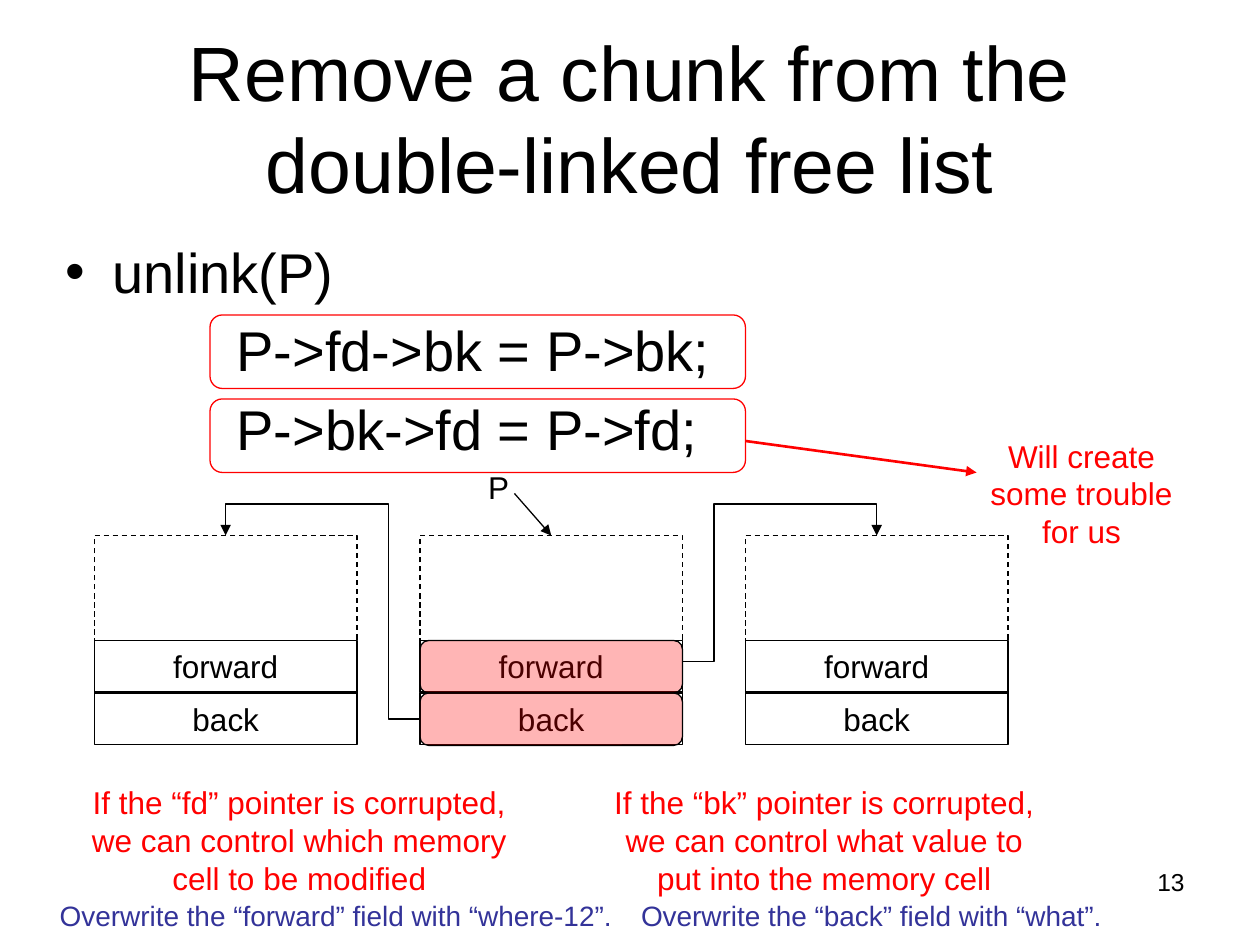
from dataclasses import dataclass

from pptx import Presentation
from pptx.dml.color import RGBColor as RGB
from pptx.enum import dml, shapes as kinds, text as txt
from pptx.oxml import ns
from pptx.oxml.xmlchemy import OxmlElement as new
from pptx.util import Pt


@dataclass(frozen=True)
class Theme:
    font: str = "Arial"
    ink: RGB = RGB(0, 0, 0)
    red: RGB = RGB(0xFF, 0, 0)
    blue: RGB = RGB(0x33, 0x33, 0x99)
    title: int = 44
    body: int = 32
    label: int = 18
    hint: int = 16
    page: int = 14
    thin: float = 0.75
    thick: float = 1.5


T = Theme()
MID = txt.PP_ALIGN.CENTER
BOX = kinds.MSO_SHAPE.RECTANGLE
ROUND = kinds.MSO_SHAPE.ROUNDED_RECTANGLE
LINE = kinds.MSO_CONNECTOR.STRAIGHT
BENT = kinds.MSO_CONNECTOR.ELBOW

# Chunk grid: three columns, each a dashed block with two fields
LEFT, STEP, WIDE = 54, 186, 150
TOP, TALL = 306, 90
FORE, BACK, FIELD = 366, 396, 29.5


def pts(*vals):
    return [Pt(v) for v in vals]


def place(item, at):
    item.left, item.top, item.width, item.height = pts(*at)


def write(para, words, size, ink=T.ink, align=None):
    para.alignment = align
    run = para.add_run()
    run.text = words
    run.font.name = T.font
    run.font.size = Pt(size)
    run.font.color.rgb = ink


def label(slide, words, at, size=T.label, ink=T.ink, align=MID):
    frame = slide.shapes.add_textbox(*pts(*at)).text_frame
    frame.word_wrap = True
    write(frame.paragraphs[0], words, size, ink, align)


def block(slide, kind, at, ink=T.ink, words="", dash=False, tint=False):
    item = slide.shapes.add_shape(kind, *pts(*at))
    item.shadow.inherit = False
    item.line.color.rgb = ink
    item.line.width = Pt(T.thin)
    if dash:
        item.line.dash_style = dml.MSO_LINE.DASH
    if tint:
        item.fill.solid()
        item.fill.fore_color.rgb = T.red
        alpha = new("a:alpha")
        alpha.set("val", "29000")
        item.element.spPr.find(".//" + ns.qn("a:srgbClr")).append(alpha)
    else:
        item.fill.background()
    if words:
        frame = item.text_frame
        frame.vertical_anchor = txt.MSO_ANCHOR.MIDDLE
        write(frame.paragraphs[0], words, T.label, align=MID)
    return item


def arrow(slide, start, end, kind=LINE, ink=T.ink, width=T.thin, bends=()):
    link = slide.shapes.add_connector(kind, *pts(*start, *end))
    link.line.color.rgb = ink
    link.line.width = Pt(width)
    props = link.element.spPr
    tip = new("a:tailEnd")
    tip.set("type", "triangle")
    props.find(ns.qn("a:ln")).append(tip)
    props.append(new("a:effectLst"))
    if bends:
        geom = props.find(ns.qn("a:prstGeom"))
        geom.set("prst", "bentConnector4")
        for num, share in enumerate(bends, 1):
            guide = new("a:gd")
            guide.set("name", f"adj{num}")
            guide.set("fmla", f"val {round(share * 100000)}")
            geom.find(ns.qn("a:avLst")).append(guide)
    return link


def loop(slide, start, end, side, rise):
    # Step out sideways, climb above the target, then drop onto it
    wide, tall = abs(end[0] - start[0]), start[1] - end[1]
    arrow(slide, start, end, BENT, bends=(side / wide, 1 + rise / tall))


def heads(slide):
    title = slide.shapes.title
    place(title, (36, 21.6, 648, 90))
    frame = title.text_frame
    frame.auto_size = txt.MSO_AUTO_SIZE.NONE
    frame.vertical_anchor = txt.MSO_ANCHOR.MIDDLE
    write(frame.paragraphs[0], "Remove a chunk from the double-linked free list",
          T.title, align=MID)

    body = slide.placeholders[1]
    place(body, (30, 132, 648, 356))
    frame = body.text_frame
    frame.auto_size = txt.MSO_AUTO_SIZE.NONE
    write(frame.paragraphs[0], "unlink(P)", T.body)
    for code in ("P->fd->bk = P->bk;", "P->bk->fd = P->fd;"):
        para = frame.add_paragraph()
        write(para, code, T.body)
        props = para._p.get_or_add_pPr()
        props.set("marL", str(Pt(98)))
        props.set("indent", "0")
        props.append(new("a:buNone"))


def chunk(slide, col):
    left = LEFT + col * STEP
    top = block(slide, BOX, (left, TOP, WIDE, TALL), dash=True)
    for words, y in (("back", BACK), ("forward", FORE)):
        block(slide, BOX, (left, y, WIDE, FIELD), words=words)
    return top


def main():
    deck = Presentation()
    deck.slide_width, deck.slide_height = pts(720, 540)
    slide = deck.slides.add_slide(deck.slide_layouts[1])
    heads(slide)

    # Chunks and the pointers between them
    tops = [chunk(slide, col) for col in range(3)]
    label(slide, "P", (270, 264, 30, 30))
    arrow(slide, (294, 282), (315, TOP)).end_connect(tops[1], 0)
    mid = LEFT + STEP
    half = WIDE / 2
    loop(slide, (mid, 411), (LEFT + half, TOP), 18, 18)
    loop(slide, (mid + WIDE, 378), (mid + STEP + half, TOP), 18, 18)

    # Marks on the corrupted fields and the code lines
    for y in (FORE, BACK):
        block(slide, ROUND, (mid, y, WIDE, 30), tint=True)
    for y in (180, 228):
        block(slide, ROUND, (120, y, 306, 42), ink=T.red)
    arrow(slide, (426, 252), (558, 270), ink=T.red, width=T.thick)

    # Remarks
    for words, at in (
        ("Will create some trouble for us", (552, 246, 132, 72)),
        ("If the “fd” pointer is corrupted, we can control which memory "
         "cell to be modified", (42, 444, 258, 72)),
        ("If the “bk” pointer is corrupted, we can control what value to "
         "put into the memory cell", (336, 444, 270, 72)),
    ):
        label(slide, words, at, ink=T.red)
    for words, at in (
        ("Overwrite the “forward” field with “where-12”.", (-6, 510, 396, 27)),
        ("Overwrite the “back” field with “what”.", (324, 510, 348, 27)),
    ):
        label(slide, words, at, T.hint, T.blue)
    label(slide, "13", (516, 492, 168, 37), T.page, align=txt.PP_ALIGN.RIGHT)

    deck.save("out.pptx")


if __name__ == "__main__":
    main()
